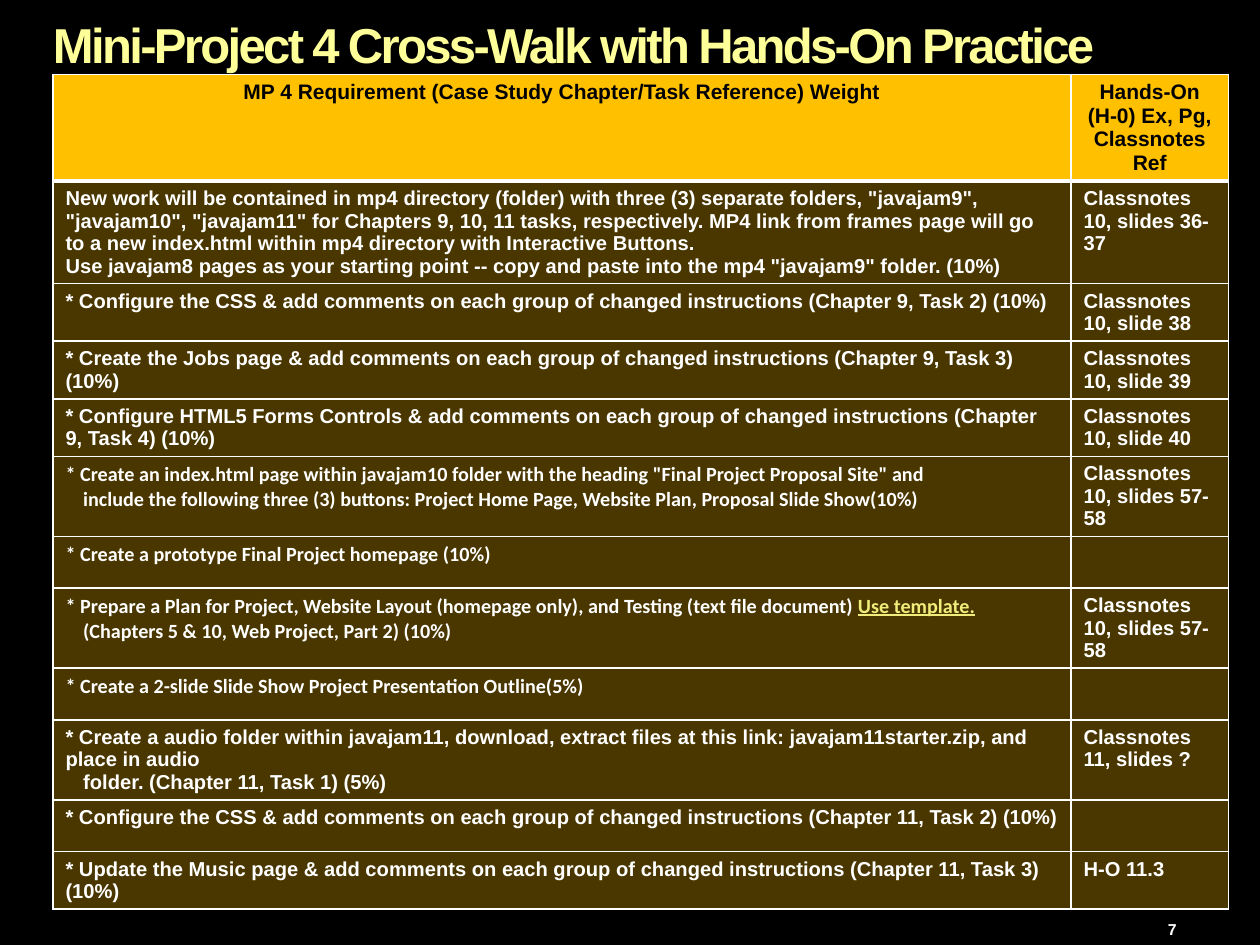
from collections import namedtuple

from lxml.etree import SubElement
from pptx import Presentation
from pptx.dml.color import RGBColor
from pptx.enum.text import MSO_ANCHOR as ANCHOR, PP_ALIGN as ALIGN
from pptx.oxml import parse_xml
from pptx.oxml.ns import nsdecls, qn
from pptx.util import Inches, Pt

Task = namedtuple("Task", "text ref more indent font link",
                  defaults=("", "", 0.14, "Arial", ""))

HEADERS = [
    ["MP 4 Requirement (Case Study Chapter/Task Reference) Weight"],
    ["Hands-On", "(H-0) Ex, Pg, Classnotes Ref"],
]
COMMENTS = "& add comments on each group of changed instructions"
TASKS = [
    Task('New work will be contained in mp4 directory (folder) with three (3) separate folders, '
         '"javajam9", "javajam10", "javajam11" for Chapters 9, 10, 11 tasks, respectively. '
         'MP4 link from frames page will go to a new index.html within mp4 directory '
         'with Interactive Buttons.',
         "Classnotes 10, slides 36-37",
         'Use javajam8 pages as your starting point -- copy and paste into the mp4 '
         '"javajam9" folder. (10%)', indent=0),
    Task(f"* Configure the CSS {COMMENTS} (Chapter 9, Task 2) (10%)", "Classnotes 10, slide 38"),
    Task(f"* Create the Jobs page {COMMENTS} (Chapter 9, Task 3) (10%)", "Classnotes 10, slide 39"),
    Task(f"* Configure HTML5 Forms Controls {COMMENTS} (Chapter 9, Task 4) (10%)",
         "Classnotes 10, slide 40"),
    Task('* Create an index.html page within javajam10 folder with the heading '
         '"Final Project Proposal Site" and',
         "Classnotes 10, slides 57-58",
         "include the following three (3) buttons: Project Home Page, Website Plan, "
         "Proposal Slide Show(10%)", font="Calibri"),
    Task("* Create a prototype Final Project homepage (10%)", font="Calibri"),
    Task("* Prepare a Plan for Project, Website Layout (homepage only), and Testing "
         "(text file document) ",
         "Classnotes 10, slides 57-58",
         "(Chapters 5 & 10, Web Project, Part 2) (10%)", font="Calibri", link="Use template."),
    Task("* Create a 2-slide Slide Show Project Presentation Outline(5%)", font="Calibri"),
    Task("* Create a audio folder within javajam11, download, extract files at this link: "
         "javajam11starter.zip, and place in audio",
         "Classnotes 11, slides ?", "folder. (Chapter 11, Task 1) (5%)"),
    Task(f"* Configure the CSS {COMMENTS} (Chapter 11, Task 2) (10%)"),
    Task(f"* Update the Music page {COMMENTS} (Chapter 11, Task 3) (10%)", "H-O 11.3"),
]


def rgb(value):
    return RGBColor.from_string(value)


class Deck:
    WHITE, BLACK, AMBER = "FFFFFF", "000000", "FFC000"
    TITLE, LINK = "FFFF99", "F0ED7B"

    def __init__(self):
        self.prs = Presentation()
        self.prs.slide_width, self.prs.slide_height = Inches(10), Inches(7.5)
        self.s = self.prs.slides.add_slide(self.prs.slide_layouts[5])
        fill = self.s.background.fill
        fill.solid()
        fill.fore_color.rgb = rgb(self.BLACK)

    def style(self, p, size, color, name="Arial", align=ALIGN.LEFT):
        p.alignment = align
        font = p.font
        font.name, font.size, font.bold = name, Pt(size), True
        font.color.rgb = rgb(color)

    def title(self, text, x, y, w, h):
        sp = self.s.shapes.title
        sp.left, sp.top, sp.width, sp.height = map(Inches, (x, y, w, h))
        tf = sp.text_frame
        tf.margin_left = tf.margin_right = tf.margin_top = tf.margin_bottom = 0
        tf.vertical_anchor = ANCHOR.TOP
        p = tf.paragraphs[0]
        r = p.add_run()
        r.text = text
        r._r.get_or_add_rPr().set("spc", "-150")
        p.line_spacing = 0.9
        self.style(p, 28, self.TITLE)

    def page_number(self, text, x, y, w, h):
        tf = self.s.shapes.add_textbox(*map(Inches, (x, y, w, h))).text_frame
        tf.word_wrap = True
        tf.vertical_anchor = ANCHOR.BOTTOM
        p = tf.paragraphs[0]
        p.text = text
        self.style(p, 9, self.WHITE)

    def table(self, headers, tasks, x, y, widths, header_height, row_height):
        height = header_height + row_height * len(tasks)
        frame = self.s.shapes.add_table(len(tasks) + 1, len(widths),
                                        *map(Inches, (x, y, sum(widths), height)))
        table = frame.table
        table.horz_banding = False
        for column, width in zip(table.columns, widths):
            column.width = Inches(width)
        for i, row in enumerate(table.rows):
            row.height = Inches(row_height if i else header_height)
        for cell, lines in zip(table.rows[0].cells, headers):
            self.paint(cell, bottom=3)
            self.label(cell, lines, 12, self.BLACK, align=ALIGN.CENTER)
        for i, task in enumerate(tasks, 1):
            work, ref = table.rows[i].cells
            self.paint(work, alpha=29)
            self.paint(ref, alpha=29)
            lines = [task.text, task.more] if task.more else [task.text]
            self.label(work, lines, 11.5, self.WHITE, task.font, indent=task.indent)
            if task.link:
                self.mark(work.text_frame.paragraphs[0], task.link)
            if task.ref:
                self.label(ref, [task.ref], 11.5, self.WHITE)

    def label(self, cell, lines, size, color, name="Arial", align=ALIGN.LEFT, indent=0):
        tf = cell.text_frame
        for i, line in enumerate(lines):
            p = tf.add_paragraph() if i else tf.paragraphs[0]
            p.text = line
            if i and indent:
                p._p.get_or_add_pPr().set("marL", str(Inches(indent)))
            self.style(p, size, color, name, align)

    def mark(self, p, text):
        r = p.add_run()
        r.text = text
        r.font.underline = True
        r.font.color.rgb = rgb(self.LINK)

    def paint(self, cell, alpha=100, bottom=1):
        cell.fill.solid()
        cell.fill.fore_color.rgb = rgb(self.AMBER)
        tc_pr = cell._tc.get_or_add_tcPr()
        if alpha < 100:
            color = tc_pr.find(".//" + qn("a:srgbClr"))
            SubElement(color, qn("a:alpha")).set("val", str(alpha * 1000))
        for i, (side, width) in enumerate(zip("LRTB", (1, 1, 1, bottom))):
            tc_pr.insert(i, parse_xml(
                f'<a:ln{side} {nsdecls("a")} w="{Pt(width)}"><a:solidFill>'
                f'<a:srgbClr val="{self.WHITE}"/></a:solidFill></a:ln{side}>'))


def main():
    deck = Deck()
    deck.title("Mini-Project 4 Cross-Walk with Hands-On Practice", 0.42, 0.17, 9.17, 0.42)
    deck.table(HEADERS, TASKS, 0.42, 0.59, (8.08, 1.25), 0.24, 0.41)
    deck.page_number("7", 9.17, 7.1, 0.66, 0.4)
    deck.prs.save("out.pptx")


if __name__ == "__main__":
    main()
